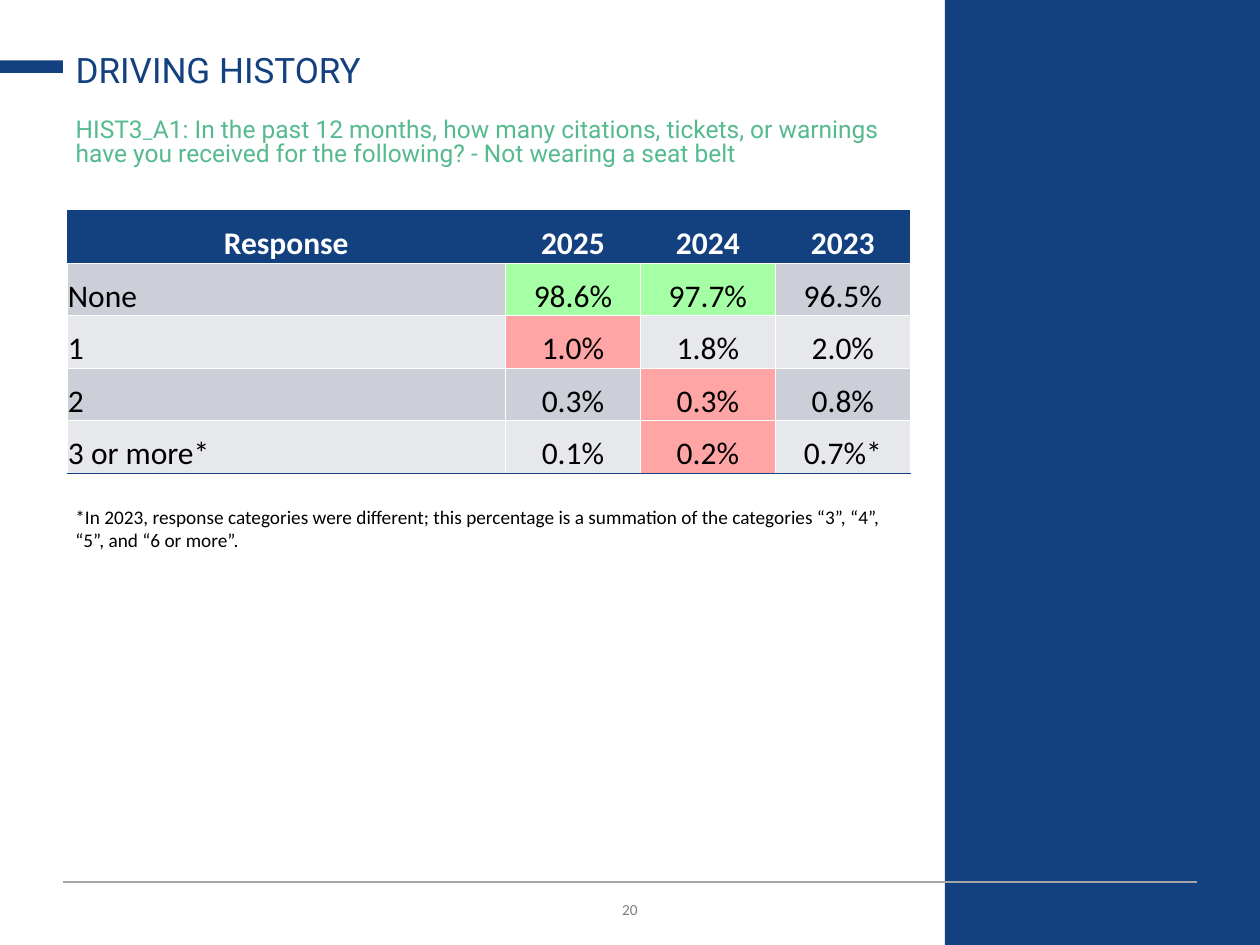
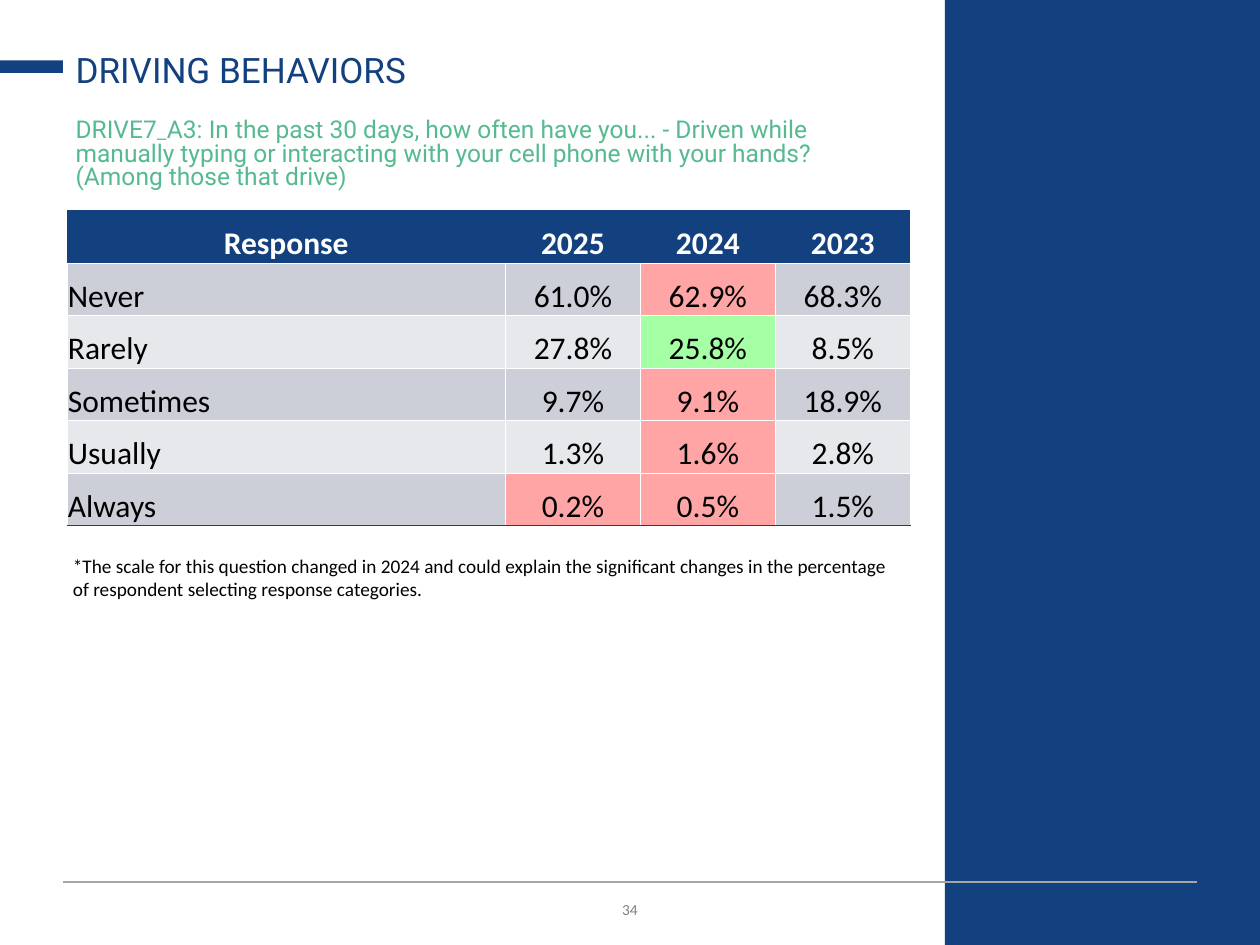
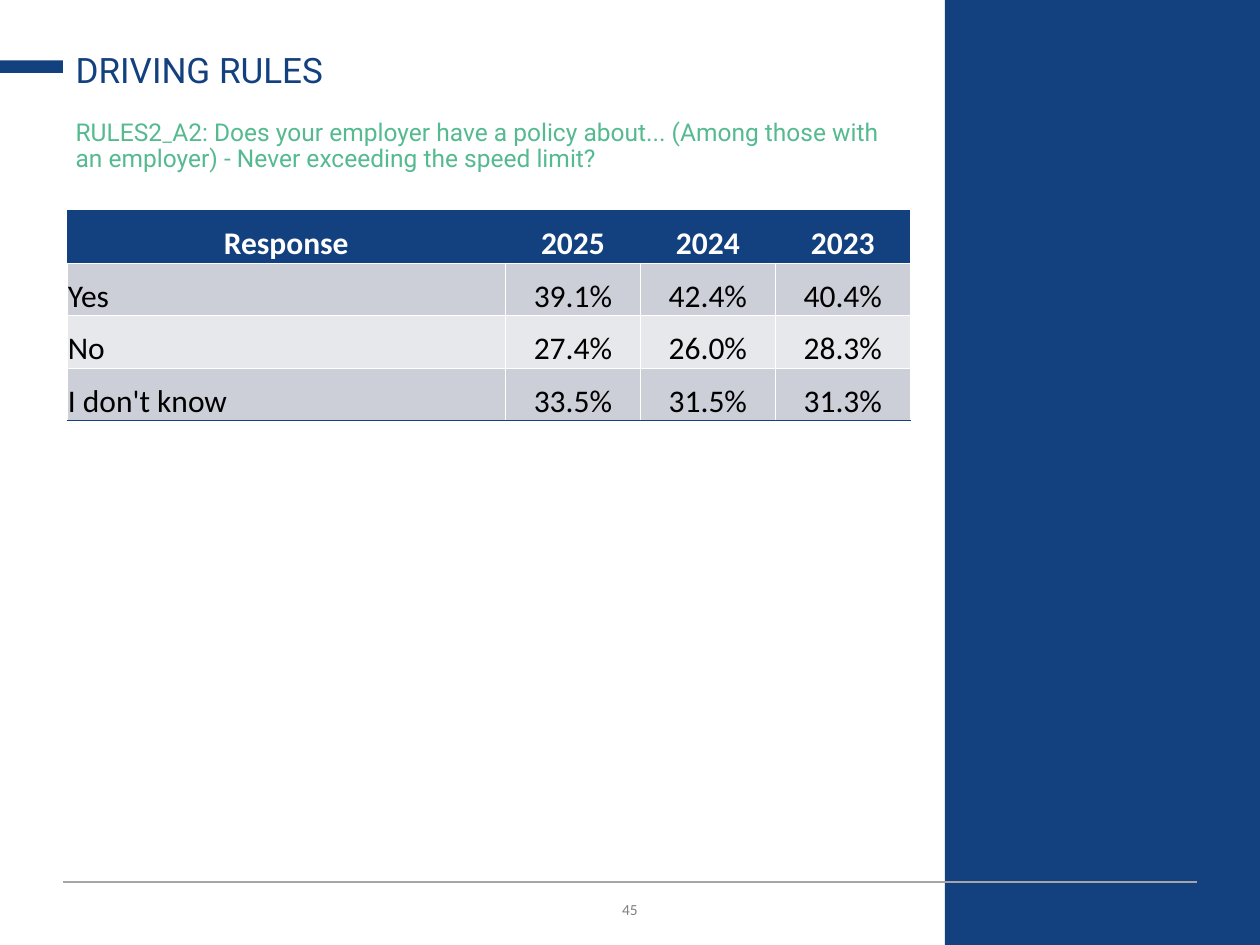
from lxml import etree
from pptx import Presentation
from pptx.dml.color import RGBColor
from pptx.enum import shapes as kinds, text as tx
from pptx.oxml.ns import qn
from pptx.util import Cm, Pt

# Shared colours and fonts
NAVY = RGBColor(0x13, 0x40, 0x7E)
MINT = RGBColor(0x55, 0xBA, 0x8F)
WHITE = RGBColor(0xFF, 0xFF, 0xFF)
BLACK = RGBColor(0x00, 0x00, 0x00)
RULE_GREY = RGBColor(0xA6, 0xA6, 0xA6)
NUMBER_GREY = RGBColor(0x80, 0x80, 0x80)
BANDS = (RGBColor(0xCC, 0xCE, 0xD8), RGBColor(0xE7, 0xE8, 0xEC))
HIGHLIGHTS = {"+": RGBColor(0xA5, 0xFF, 0xA5), "-": RGBColor(0xFF, 0xA5, 0xA5)}
HEADING_FONT, UNDERSCORE_FONT, TEXT_FONT = "Roboto", "League Spartan", "Calibri"

# Shared measures
LEFT = Cm(1.27)
TEXT_WIDTH = Cm(17.02)
ROW_HEIGHT = Cm(1.06)
COLUMN_WIDTHS = (Cm(8.84), Cm(2.72), Cm(2.72), Cm(2.72))
HEADER = ("Response", "2025", "2024", "2023")
NO_STYLE = "{2D5ABB26-0587-4C30-8999-92F81FD0307C}"


def add_run(paragraph, words, font, size, color, bold=False):
    run = paragraph.add_run()
    run.text = words
    run.font.name, run.font.size, run.font.bold = font, Pt(size), bold
    run.font.color.rgb = color
    return run


def place(shape, left, top, width, height):
    shape.left, shape.top, shape.width, shape.height = left, top, width, height


def add_block(slide, left, top, width, height):
    block = slide.shapes.add_shape(kinds.MSO_SHAPE.RECTANGLE, left, top, width, height)
    block.shadow.inherit = False
    block.fill.solid()
    block.fill.fore_color.rgb = NAVY
    block.line.fill.background()


def add_textbox(slide, left, top, width, height):
    frame = slide.shapes.add_textbox(left, top, width, height).text_frame
    frame.word_wrap = True
    return frame


def add_frame(slide, number):
    """Side panel, title accent, footer rule and page number."""
    add_block(slide, Cm(19.05), 0, Cm(6.35), Cm(19.05))
    add_block(slide, 0, Cm(1.22), LEFT, Cm(0.25))
    rule = slide.shapes.add_connector(
        kinds.MSO_CONNECTOR.STRAIGHT, LEFT, Cm(17.78), Cm(24.13), Cm(17.78))
    rule.line.color.rgb = RULE_GREY
    rule.line.width = Pt(0.75)
    etree.SubElement(rule._element.spPr, qn("a:effectLst"))

    footer = add_textbox(slide, LEFT, Cm(17.93), Cm(22.86), Cm(0.76))
    footer.vertical_anchor = tx.MSO_ANCHOR.MIDDLE
    paragraph = footer.paragraphs[0]
    paragraph.alignment = tx.PP_ALIGN.CENTER
    page = add_run(paragraph, str(number), TEXT_FONT, 11, NUMBER_GREY)
    page._r.get_or_add_rPr().set("cap", "small")


def set_title(slide, words):
    title = slide.shapes.title
    place(title, LEFT, Cm(0.74), TEXT_WIDTH, Cm(1.22))
    frame = title.text_frame
    frame.auto_size = tx.MSO_AUTO_SIZE.NONE
    frame.vertical_anchor = tx.MSO_ANCHOR.BOTTOM
    paragraph = frame.paragraphs[0]
    paragraph.alignment = tx.PP_ALIGN.LEFT
    paragraph.line_spacing = 0.9
    add_run(paragraph, words, HEADING_FONT, 20, NAVY)


def set_question(slide, question, spacing):
    body = slide.placeholders[1]
    place(body, LEFT, Cm(2.29), TEXT_WIDTH, Cm(1.7))
    frame = body.text_frame
    frame.auto_size = tx.MSO_AUTO_SIZE.NONE
    paragraph = frame.paragraphs[0]
    properties = paragraph._p.get_or_add_pPr()
    properties.set("marL", "0")
    properties.set("indent", "0")
    etree.SubElement(properties, qn("a:buNone"))
    paragraph.line_spacing = spacing
    paragraph.space_before = Pt(0)
    section, underscore, rest = question.partition("_")
    for words, font in ((section, HEADING_FONT), (underscore, UNDERSCORE_FONT),
                        (rest, HEADING_FONT)):
        add_run(paragraph, words, font, 14, MINT)


def set_borders(cell, sides):
    """Draw half-point borders; sides maps L, R, T, B to colours, in that order."""
    properties = cell._tc.get_or_add_tcPr()
    for side, color in sides.items():
        line = etree.SubElement(properties, qn(f"a:ln{side}"), w=str(Pt(0.5)))
        fill = etree.SubElement(line, qn("a:solidFill"))
        etree.SubElement(fill, qn("a:srgbClr"), val=str(color))


def fill_cell(cell, words, fill, color, centred, bold, borders):
    cell.margin_left = cell.margin_right = cell.margin_top = Cm(0.02)
    cell.margin_bottom = 0
    cell.vertical_anchor = tx.MSO_ANCHOR.BOTTOM
    set_borders(cell, borders)
    cell.fill.solid()
    cell.fill.fore_color.rgb = fill
    paragraph = cell.text_frame.paragraphs[0]
    paragraph.alignment = tx.PP_ALIGN.CENTER if centred else tx.PP_ALIGN.LEFT
    add_run(paragraph, words, TEXT_FONT, 18, color, bold)


def add_responses(slide, responses):
    """Table of shares by year; a leading + or - marks a highlighted share."""
    count = len(responses) + 1
    table = slide.shapes.add_table(
        count, len(HEADER), Cm(1.35), Cm(4.24), sum(COLUMN_WIDTHS), ROW_HEIGHT * count).table
    table._tbl.tblPr.find(qn("a:tableStyleId")).text = NO_STYLE
    table.horz_banding = False
    for column, width in zip(table.columns, COLUMN_WIDTHS):
        column.width = width
    for row in table.rows:
        row.height = ROW_HEIGHT

    for c, heading in enumerate(HEADER):
        fill_cell(table.cell(0, c), heading, NAVY, WHITE, True, True, {"B": WHITE})
    for r, response in enumerate(responses, 1):
        bottom = NAVY if r == len(responses) else WHITE
        borders = {"L": WHITE, "R": WHITE, "T": WHITE, "B": bottom}
        for c, value in enumerate(response):
            fill = HIGHLIGHTS.get(value[0], BANDS[(r - 1) % 2])
            fill_cell(table.cell(r, c), value.lstrip("+-"), fill, BLACK, c > 0, False, borders)


def add_footnote(slide, words, left, top, width):
    frame = add_textbox(slide, left, top, width, Cm(1.19))
    add_run(frame.paragraphs[0], words, TEXT_FONT, 11, BLACK)


def add_question_slide(deck, number, title, question, responses, spacing=0.8):
    slide = deck.slides.add_slide(deck.slide_layouts[1])
    add_frame(slide, number)
    set_title(slide, title)
    set_question(slide, question, spacing)
    add_responses(slide, responses)
    return slide


def main():
    deck = Presentation()
    deck.slide_width, deck.slide_height = Cm(25.4), Cm(19.05)

    # Seat belt citations
    history = add_question_slide(
        deck, 20, "DRIVING HISTORY",
        "HIST3_A1: In the past 12 months, how many citations, tickets, or warnings "
        "have you received for the following? - Not wearing a seat belt",
        [("None", "+98.6%", "+97.7%", "96.5%"),
         ("1", "-1.0%", "1.8%", "2.0%"),
         ("2", "0.3%", "-0.3%", "0.8%"),
         ("3 or more*", "0.1%", "-0.2%", "0.7%*")])
    add_footnote(
        history,
        "*In 2023, response categories were different; this percentage is a summation "
        "of the categories “3”, “4”, “5”, and “6 or more”.",
        LEFT, Cm(10.06), TEXT_WIDTH)

    # Phone use while driving
    behaviors = add_question_slide(
        deck, 34, "DRIVING BEHAVIORS",
        "DRIVE7_A3: In the past 30 days, how often have you... - Driven while manually "
        "typing or interacting with your cell phone with your hands? "
        "(Among those that drive)",
        [("Never", "61.0%", "-62.9%", "68.3%"),
         ("Rarely", "27.8%", "+25.8%", "8.5%"),
         ("Sometimes", "9.7%", "-9.1%", "18.9%"),
         ("Usually", "1.3%", "-1.6%", "2.8%"),
         ("Always", "-0.2%", "-0.5%", "1.5%")])
    add_footnote(
        behaviors,
        "*The scale for this question changed in 2024 and could explain the significant "
        "changes in the percentage of respondent selecting response categories.",
        Cm(1.22), Cm(11.05), Cm(17.07))

    # Employer speed policy
    add_question_slide(
        deck, 45, "DRIVING RULES",
        "RULES2_A2: Does your employer have a policy about... (Among those with an "
        "employer) - Never exceeding the speed limit?",
        [("Yes", "39.1%", "42.4%", "40.4%"),
         ("No", "27.4%", "26.0%", "28.3%"),
         ("I don't know", "33.5%", "31.5%", "31.3%")],
        spacing=0.9)

    deck.save("out.pptx")


if __name__ == "__main__":
    main()
